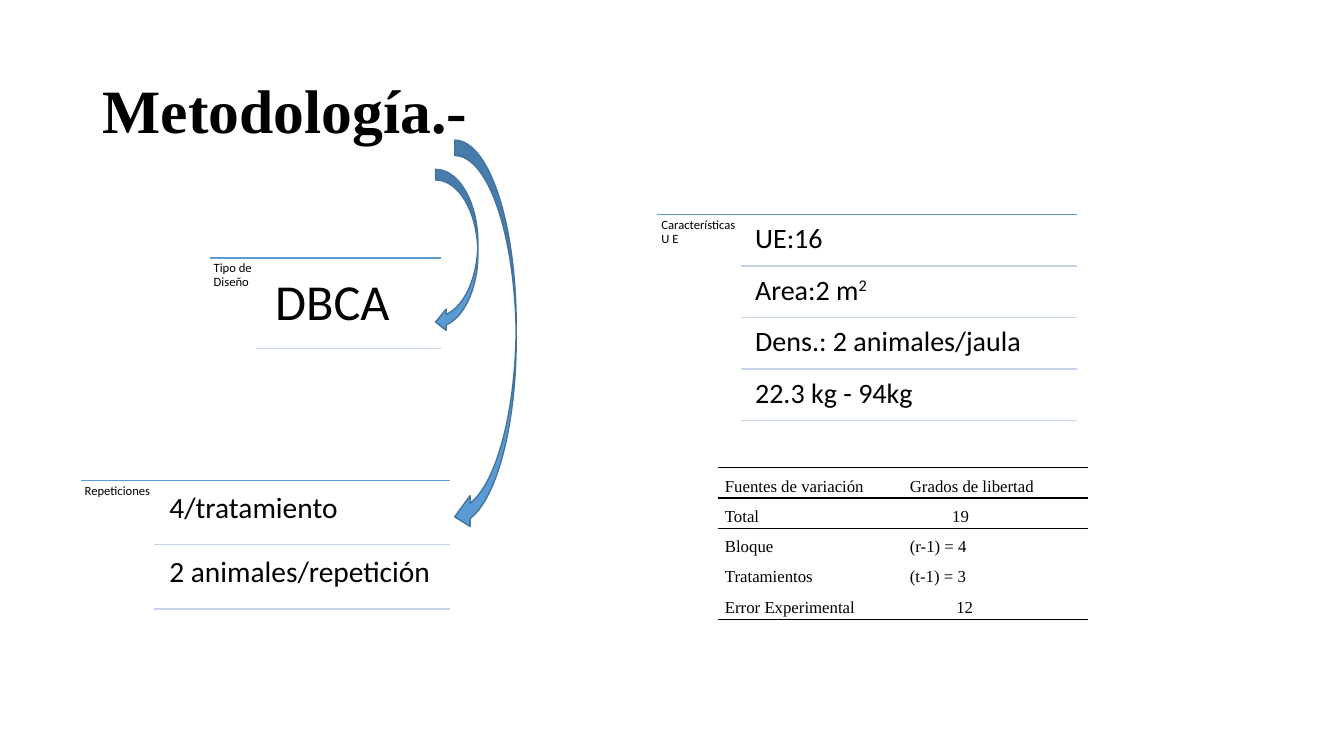
from dataclasses import dataclass

from lxml.etree import SubElement
from pptx import Presentation
from pptx.dml.color import RGBColor
from pptx.enum.shapes import MSO_CONNECTOR, MSO_SHAPE
from pptx.enum.text import MSO_ANCHOR, MSO_AUTO_SIZE, PP_ALIGN
from pptx.oxml.ns import qn
from pptx.util import Inches, Pt

# Content: a list is (text, superscript) runs per item
TITLE = "Metodología.-"
LISTS = [
    {"label": "Tipo de Diseño", "items": [("DBCA", "")],
     "left": 2.08, "top": 2.56, "right": 4.37, "label_width": 0.46,
     "pitch": 0.9, "gap": 0.04, "indent": 0.04, "inset": 0.15, "size": 36},
    {"label": "Repeticiones", "items": [("4/tratamiento", ""), ("2 animales/repetición", "")],
     "left": 0.8, "top": 4.77, "right": 4.46, "label_width": 0.73,
     "pitch": 0.635, "gap": 0.03, "indent": 0.06, "inset": 0.09, "size": 21},
    {"label": "Características U E",
     "items": [("UE:16", ""), ("Area:2 m", "2"), ("Dens.: 2 animales/jaula", ""),
               ("22.3 kg - 94kg", "")],
     "left": 6.52, "top": 2.13, "right": 10.68, "label_width": 0.83,
     "pitch": 0.51, "gap": 0.02, "indent": 0.06, "inset": 0.08, "size": 20},
]
# Rows: source, degrees of freedom, indent of the second cell
VARIATION = [
    ("Fuentes de variación", "Grados de libertad", 0),
    ("Total", "19", 0.42),
    ("Bloque", "(r-1) = 4", 0),
    ("Tratamientos", "(t-1) = 3", 0),
    ("Error Experimental", "12", 0.46),
]
ARROWS = [(4.32, 1.68, 0.42, 1.62), (4.51, 1.39, 0.61, 3.89)]
PLAIN_TABLE = "{2D5ABB26-0587-4C30-8999-92F81FD0307C}"


@dataclass
class Theme:
    ink: str = "000000"
    paper: str = "FFFFFF"
    accent: str = "5B9BD5"
    accent_dark: str = "43739E"
    rule: str = "C4D5EB"
    sans: str = "Calibri"
    serif: str = "Times New Roman"
    title_size: int = 44
    label_size: int = 9
    table_size: int = 12


theme = Theme()


def color(value):
    return RGBColor.from_string(value)


def apply(target, **values):
    for name, value in values.items():
        setattr(target, name, value)


def add_span(para, text, size, face, bold=False):
    span = para.add_run()
    span.text = text
    apply(span.font, size=Pt(size), name=face, bold=bold)
    span.font.color.rgb = color(theme.ink)
    return span


def add_text(page, place, inset, size, text, raised=""):
    frame = page.shapes.add_textbox(*map(Inches, place)).text_frame
    apply(frame, word_wrap=True, vertical_anchor=MSO_ANCHOR.TOP,
          **{f"margin_{side}": Inches(inset) for side in ("left", "top", "right", "bottom")})
    para = frame.paragraphs[0]
    para.line_spacing = 0.9
    add_span(para, text, size, theme.sans)
    if raised:
        span = add_span(para, raised, size, theme.sans)
        span.font._element.set("baseline", "30000")


def add_rule(page, left, right, top, value):
    line = page.shapes.add_connector(
        MSO_CONNECTOR.STRAIGHT, Inches(left), Inches(top), Inches(right), Inches(top))
    line.line.color.rgb = color(value)
    line.line.width = Pt(1)
    SubElement(line._element.spPr, qn("a:effectLst"))


def add_list(page, group):
    left, top, right, pitch = (group[key] for key in ("left", "top", "right", "pitch"))
    split = left + group["label_width"]
    item_left = split + group["indent"]
    add_rule(page, left, right, top, theme.accent)
    add_text(page, (left, top, group["label_width"], pitch * len(group["items"])),
             0.04, theme.label_size, group["label"])
    for index, (text, raised) in enumerate(group["items"]):
        row_top = top + index * pitch
        place = (item_left, row_top + group["gap"], right - item_left, pitch - group["gap"])
        add_text(page, place, group["inset"], group["size"], text, raised)
        add_rule(page, split, right, row_top + pitch, theme.rule)


def add_border(cell, side):
    border = SubElement(cell._tc.get_or_add_tcPr(), qn(f"a:{side}"), w=str(Pt(1)))
    fill = SubElement(border, qn("a:solidFill"))
    SubElement(fill, qn("a:srgbClr"), val=theme.ink)


def add_variation_table(page):
    frame = page.shapes.add_table(len(VARIATION), 2, Inches(7.12), Inches(4.64),
                                  Inches(3.67), Inches(0.28 * len(VARIATION)))
    table = frame.table
    apply(table, first_row=False, horz_banding=False)
    table._tbl.tblPr.find(qn("a:tableStyleId")).text = PLAIN_TABLE
    last = len(VARIATION) - 1
    for row, (source, freedom, indent) in enumerate(VARIATION):
        table.rows[row].height = Inches(0.28)
        for column, (text, shift) in enumerate([(source, 0), (freedom, indent)]):
            cell = table.cell(row, column)
            apply(cell, margin_left=Inches(0.07 + shift), margin_right=Inches(0.07),
                  margin_top=0, margin_bottom=0)
            if row in (0, 1):
                add_border(cell, "lnT")
            if row in (0, last):
                add_border(cell, "lnB")
            cell.fill.solid()
            cell.fill.fore_color.rgb = color(theme.paper)
            para = cell.text_frame.paragraphs[0]
            apply(para, alignment=PP_ALIGN.JUSTIFY, line_spacing=1.5)
            add_span(para, text, theme.table_size, theme.serif)


def add_arrow(page, place):
    arrow = page.shapes.add_shape(MSO_SHAPE.CURVED_LEFT_ARROW, *map(Inches, place))
    arrow.shadow.inherit = False
    arrow.fill.solid()
    arrow.fill.fore_color.rgb = color(theme.accent)
    arrow.line.color.rgb = color(theme.accent_dark)
    arrow.line.width = Pt(1)


def main():
    deck = Presentation()
    apply(deck, slide_width=Inches(13.33), slide_height=Inches(7.5))
    page = deck.slides.add_slide(deck.slide_layouts[5])

    # Title
    title = page.shapes.title
    apply(title, left=Inches(0.92), top=Inches(0.4), width=Inches(11.5), height=Inches(1.45))
    apply(title.text_frame, vertical_anchor=MSO_ANCHOR.MIDDLE, word_wrap=True,
          auto_size=MSO_AUTO_SIZE.NONE)
    para = title.text_frame.paragraphs[0]
    apply(para, alignment=PP_ALIGN.LEFT, line_spacing=0.9)
    add_span(para, TITLE, theme.title_size, theme.serif, bold=True)

    # Ruled lists
    for group in LISTS:
        add_list(page, group)

    # Table and arrows
    add_variation_table(page)
    for place in ARROWS:
        add_arrow(page, place)

    deck.save("out.pptx")


if __name__ == "__main__":
    main()
